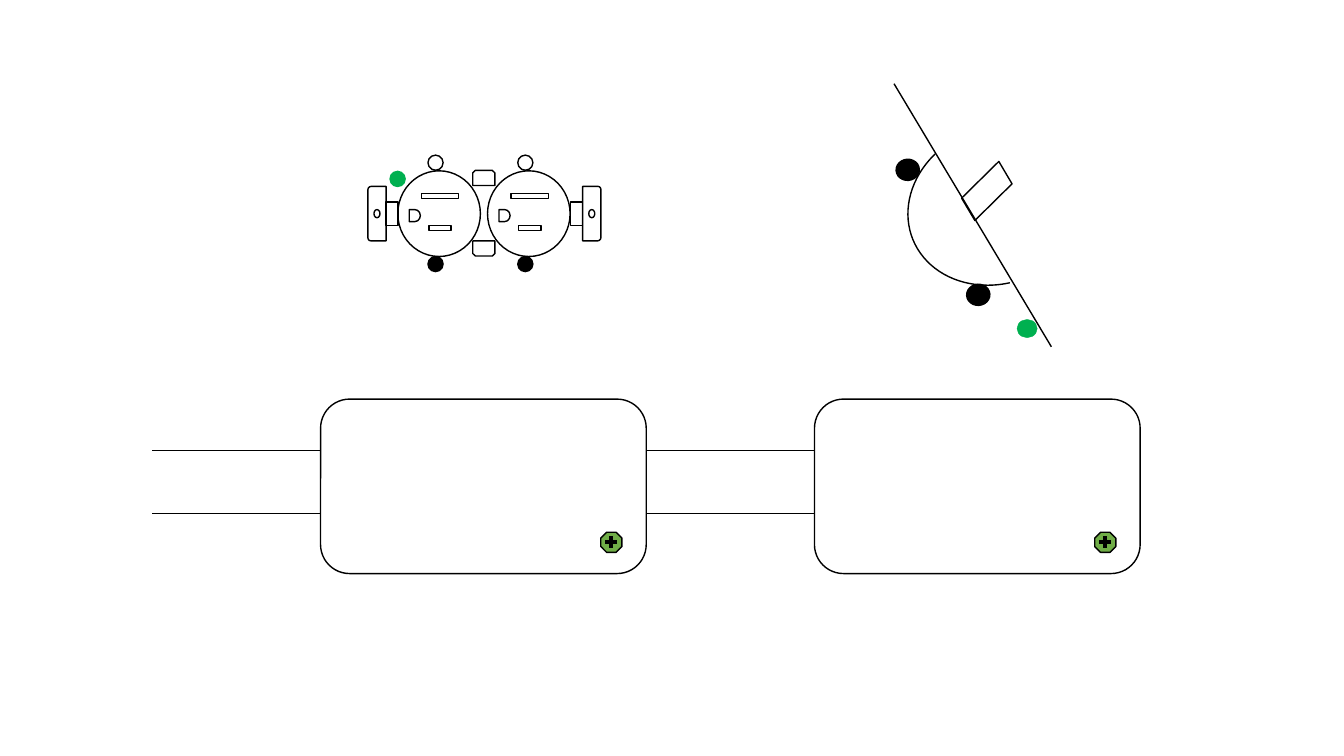
"""Build a wiring slide: an outlet and a switch above two conduit-fed boxes."""
from lxml.etree import SubElement
from pptx import Presentation
from pptx.dml.color import RGBColor
from pptx.enum.shapes import MSO_CONNECTOR, MSO_SHAPE
from pptx.oxml.ns import qn
from pptx.util import Pt

COLORS = {"ink": "000000", "ground": "00B050", "box_screw": "70AD47"}

BOX_LEFTS = (581.8, 229)
BOX_TOP, BOX_WIDTH, BOX_HEIGHT = 285.1, 232.6, 124.6
CONDUIT_YS, CONDUIT_LENGTH = (321.8, 366.5), 120.6
BOX_SCREW = (207.7, 387.4)
SCREW_ARM = 4.3

FACE_CENTERS = (313.6, 377.7)
OUTLET_X, OUTLET_Y = 346, 152.6
FACE_PARTS = [
    (MSO_SHAPE.OVAL, 0, 0, 61.2, 59, 90, None),
    (MSO_SHAPE.RECTANGLE, 0.7, -12.6, 3.6, 26.6, 90, None),
    (MSO_SHAPE.RECTANGLE, 0.7, 10.1, 3.6, 15.8, 90, None),
    (MSO_SHAPE.FLOWCHART_DELAY, -17.3, 1.4, 7.9, 8.6, 0, None),
    (MSO_SHAPE.OVAL, -2.5, -36.4, 10.8, 10.8, 90, None),
    (MSO_SHAPE.OVAL, -2.5, 36, 10.8, 10.8, 90, "ink"),
]
EAR_PARTS = [
    (MSO_SHAPE.ROUND_2_SAME_RECTANGLE, 76.7, 38.9, 13),
    (MSO_SHAPE.RECTANGLE, 65.9, 16.6, 8.6),
    (MSO_SHAPE.OVAL, 76.7, 5.8, 4.3),
]
EAR_SIDES = ((1, 90), (-1, 270))
TABS = ((177.5, 180), (127.1, 0))
OUTLET_GROUND = (284, 127.8)

SWITCH_BODY = (712.4, 146.5, 130.3, 111.6, 157.7)
SWITCH_ARC = (169.91, 37.02)
SWITCH_STRAP = (638.6, 59.8, 751, 247.7)
SWITCH_LEVER = (704.9, 136.4, 41.8, 18, 315.4)
SWITCH_SCREWS = ((698.8, 210.6), (648.4, 121.3))
SWITCH_GROUND = (733.7, 234.7, 14.4, 13)


def add_part(group, kind, x, y, width, height, turn=0, fill=None, line="ink", weight=1):
    """Add a preset shape centred on x, y."""
    part = group.shapes.add_shape(
        kind, Pt(x - width / 2), Pt(y - height / 2), Pt(width), Pt(height))
    part.rotation = turn
    part.shadow.inherit = False
    if fill:
        part.fill.solid()
        part.fill.fore_color.rgb = RGBColor.from_string(COLORS[fill])
    else:
        part.fill.background()
    part.line.color.rgb = RGBColor.from_string(COLORS[line])
    part.line.width = Pt(weight)
    return part


def add_line(group, x1, y1, x2, y2, weight):
    """Add a straight ink line without a shadow."""
    stroke = group.shapes.add_connector(
        MSO_CONNECTOR.STRAIGHT, Pt(x1), Pt(y1), Pt(x2), Pt(y2))
    stroke.line.color.rgb = RGBColor.from_string(COLORS["ink"])
    stroke.line.width = Pt(weight)
    SubElement(stroke._element.spPr, qn("a:effectLst"))


def add_box(group, left):
    """Add a junction box with its conduit and grounding screw."""
    add_part(group, MSO_SHAPE.ROUNDED_RECTANGLE, left + BOX_WIDTH / 2,
             BOX_TOP + BOX_HEIGHT / 2, BOX_WIDTH, BOX_HEIGHT)
    for y in CONDUIT_YS:
        add_line(group, left, y, left - CONDUIT_LENGTH, y, 0.5)
    x, y = left + BOX_SCREW[0], BOX_SCREW[1]
    add_part(group, MSO_SHAPE.OCTAGON, x, y, 15.1, 14.4, fill="box_screw")
    add_line(group, x - 0.4, y - SCREW_ARM, x - 0.4, y + SCREW_ARM, 3)
    add_line(group, x + SCREW_ARM - 0.4, y, x - SCREW_ARM - 0.4, y, 3)


def add_outlet(group):
    """Add the duplex outlet with its screws, ears and tabs."""
    for center in FACE_CENTERS:
        for kind, dx, dy, width, height, turn, fill in FACE_PARTS:
            add_part(group, kind, center + dx, OUTLET_Y + dy, width, height, turn, fill)
    for side, turn in EAR_SIDES:
        for kind, reach, width, height in EAR_PARTS:
            add_part(group, kind, OUTLET_X + side * reach, OUTLET_Y, width, height, turn)
    add_part(group, MSO_SHAPE.OVAL, *OUTLET_GROUND, 10.8, 10.8, 90, "ground", "ground")
    for y, turn in TABS:
        add_part(group, MSO_SHAPE.SNIP_2_SAME_RECTANGLE, OUTLET_X - 0.4, y, 15.8, 10.8, turn)


def add_switch(group):
    """Add the switch seen from the side."""
    body = add_part(group, MSO_SHAPE.ARC, *SWITCH_BODY)
    body.adjustments[0], body.adjustments[1] = SWITCH_ARC
    add_line(group, *SWITCH_STRAP, 1)
    add_part(group, MSO_SHAPE.PARALLELOGRAM, *SWITCH_LEVER)
    for x, y in SWITCH_SCREWS:
        add_part(group, MSO_SHAPE.OVAL, x, y, 16.6, 15.1, 356, "ink")
    add_part(group, MSO_SHAPE.OVAL, *SWITCH_GROUND, fill="ground", line="ground", weight=0.25)


def main():
    """Assemble and save the slide."""
    deck = Presentation()
    deck.slide_width, deck.slide_height = Pt(960), Pt(540)
    slide = deck.slides.add_slide(deck.slide_layouts[6])
    for left in BOX_LEFTS:
        add_box(slide.shapes.add_group_shape(), left)
    add_outlet(slide.shapes.add_group_shape())
    add_switch(slide.shapes.add_group_shape())
    deck.save("out.pptx")


if __name__ == "__main__":
    main()
